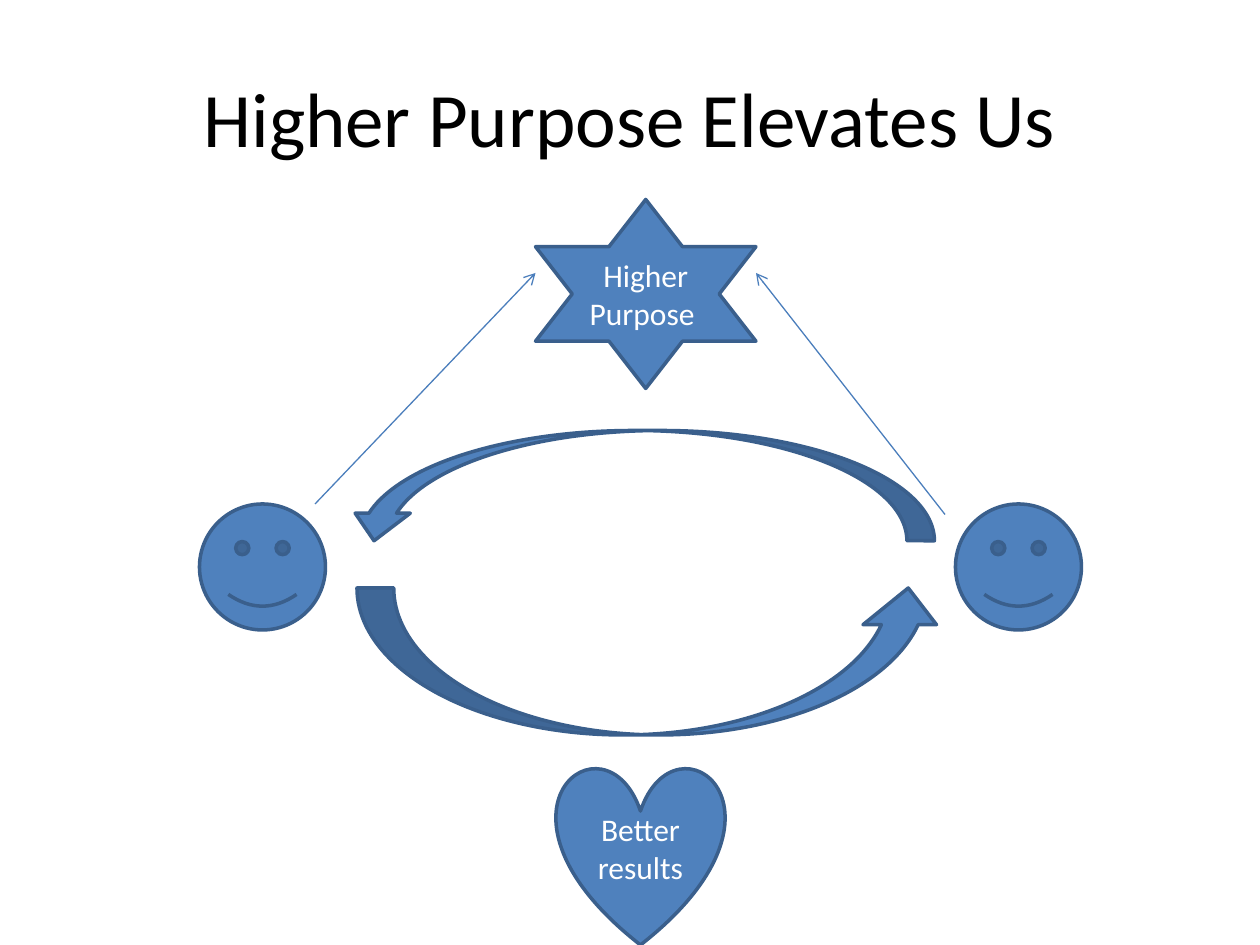
from lxml.etree import SubElement
from pptx import Presentation
from pptx.dml.color import RGBColor
from pptx.enum.shapes import MSO_CONNECTOR, MSO_SHAPE
from pptx.enum.text import MSO_ANCHOR, PP_ALIGN
from pptx.oxml.ns import qn
from pptx.util import Pt

COLORS = {
    "fill": "4F81BD",
    "outline": "3A5F8C",
    "arrow": "4B7EBC",
    "label": "FFFFFF",
    "title": "000000",
}
FONT = "Calibri"


def color(name):
    return RGBColor.from_string(COLORS[name])


def write_text(shape, text, size, color_name):
    frame = shape.text_frame
    frame.word_wrap = True
    frame.vertical_anchor = MSO_ANCHOR.MIDDLE
    paragraph = frame.paragraphs[0]
    paragraph.text = text
    paragraph.alignment = PP_ALIGN.CENTER
    paragraph.font.name = FONT
    paragraph.font.size = Pt(size)
    paragraph.font.color.rgb = color(color_name)


def add_figure(slide, kind, left, top, width, height, text=None):
    shape = slide.shapes.add_shape(kind, Pt(left), Pt(top), Pt(width), Pt(height))
    shape.shadow.inherit = False
    shape.fill.solid()
    shape.fill.fore_color.rgb = color("fill")
    shape.line.color.rgb = color("outline")
    shape.line.width = Pt(2)
    if text:
        write_text(shape, text, 18, "label")
    return shape


def add_arrow(slide, start_x, start_y, end_x, end_y):
    arrow = slide.shapes.add_connector(
        MSO_CONNECTOR.STRAIGHT, Pt(start_x), Pt(start_y), Pt(end_x), Pt(end_y))
    arrow.line.color.rgb = color("arrow")
    arrow.line.width = Pt(0.75)
    SubElement(arrow.line._get_or_add_ln(), qn("a:tailEnd"), type="arrow")
    SubElement(arrow._element.spPr, qn("a:effectLst"))


def add_title(slide, left, top, width, height):
    title = slide.shapes.add_textbox(Pt(left), Pt(top), Pt(width), Pt(height))
    write_text(title, "Higher Purpose Elevates Us", 44, "title")


def add_exchange(slide, left, top, width, height):
    """Two people facing each other, with a loop of arrows between them."""
    face_size, loop_width = 72, 336
    # Loop
    add_figure(slide, MSO_SHAPE.CURVED_UP_ARROW,
               left + 90, top + height - 84, loop_width, 84)
    upper = add_figure(slide, MSO_SHAPE.CURVED_DOWN_ARROW,
                       left + 84, top, loop_width, 63)
    upper._element.spPr.find(qn("a:xfrm")).set("flipH", "1")
    # People
    for face_left in (left, left + width - face_size):
        add_figure(slide, MSO_SHAPE.SMILEY_FACE,
                   face_left, top + 42, face_size, face_size)


def add_purpose(slide, left, top, width, height):
    """The star, with an arrow rising to it from each person."""
    add_figure(slide, MSO_SHAPE.STAR_6_POINT, left, top, width, height,
               "Higher Purpose ")
    tip = top + 42
    add_arrow(slide, left - 126, tip + 132, left, tip)
    add_arrow(slide, left + width + 108, tip + 138, left + width, tip)


def main():
    presentation = Presentation()
    presentation.slide_width = Pt(720)
    presentation.slide_height = Pt(540)
    slide = presentation.slides.add_slide(presentation.slide_layouts[6])

    add_exchange(slide, 114, 246, 504, 174)
    add_purpose(slide, 306, 114, 126, 108)
    # Outcome
    add_figure(slide, MSO_SHAPE.HEART, 318, 438, 96, 102, "Better results")
    add_title(slide, 36, 21.6, 648, 90)

    presentation.save("out.pptx")


if __name__ == "__main__":
    main()
